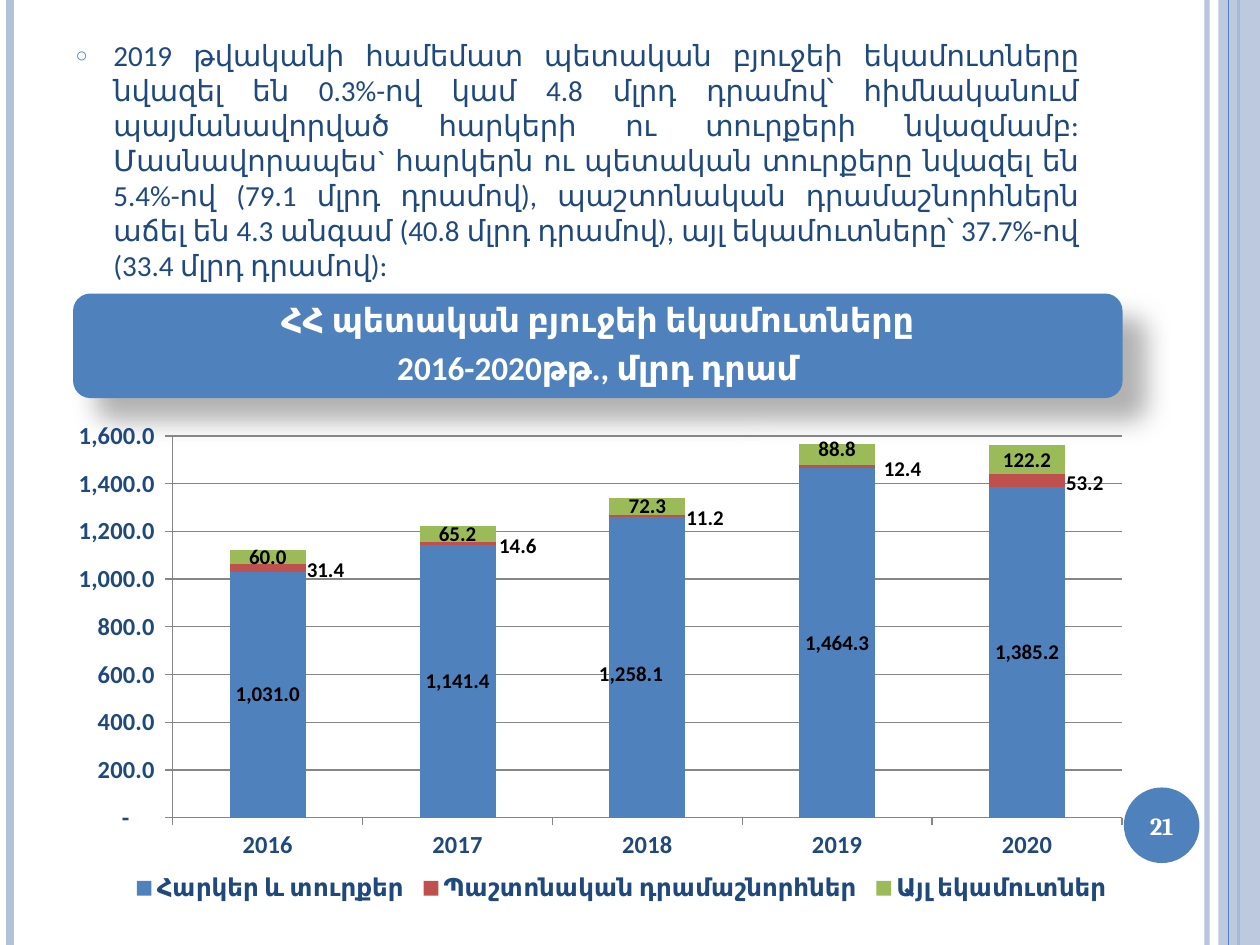
from lxml.etree import SubElement
from pptx import Presentation
from pptx.chart.data import CategoryChartData
from pptx.dml.color import RGBColor
from pptx.enum.chart import XL_CHART_TYPE as ChartType, XL_LEGEND_POSITION as LegendPosition
from pptx.enum.shapes import MSO_CONNECTOR as Connector, MSO_SHAPE as Shape
from pptx.enum.text import MSO_ANCHOR as Anchor, MSO_AUTO_SIZE as AutoSize, PP_ALIGN as Align
from pptx.oxml import parse_xml
from pptx.oxml.ns import nsdecls, qn
from pptx.util import Inches, Pt

COLORS = {"blue": "4F81BD", "red": "C0504D", "green": "9BBB59", "navy": "1F497D",
          "pale": "B3C1DB", "grid": "868686", "white": "FFFFFF", "black": "000000"}
NUMBER_FORMAT = '_(* #,##0.0_);_(* \\(#,##0.0\\);_(* "-"??_);_(@_)'
YEARS = ["2016", "2017", "2018", "2019", "2020"]
REVENUES = [
    ("Հարկեր և տուրքեր", "blue", [1031, 1141.4, 1258.1, 1464.3, 1385.2],
     {2: (-0.13, 0.05)}),
    ("Պաշտոնական դրամաշնորհներ", "red", [31.4, 14.6, 11.2, 12.4, 53.2],
     {0: (0.46, 0.02), 1: (0.48, 0.02), 2: (0.46, 0.02), 3: (0.52, 0.02), 4: (0.46, 0.02)}),
    ("Այլ եկամուտներ", "green", [60, 65.2, 72.3, 88.8, 122.2],
     {3: (0, -0.04)}),
]
SUMMARY = (
    "2019 թվականի համեմատ պետական բյուջեի եկամուտները նվազել են 0.3%-ով կամ 4.8 մլրդ "
    "դրամով՝ հիմնականում պայմանավորված հարկերի ու տուրքերի նվազմամբ: Մասնավորապես` "
    "հարկերն ու պետական տուրքերը նվազել են 5.4%-ով (79.1 մլրդ դրամով), պաշտոնական "
    "դրամաշնորհներն աճել են 4.3 անգամ (40.8 մլրդ դրամով), այլ եկամուտները՝ 37.7%-ով "
    "(33.4 մլրդ դրամով):")


def rgb(name):
    """Return the named colour."""
    return RGBColor.from_string(COLORS[name])


def style_font(font, size, color, bold=True, face="Calibri"):
    """Apply face, size, colour and weight to a font."""
    font.name, font.size, font.bold = face, Pt(size), bold
    font.color.rgb = rgb(color)


def set_alpha(shape, percent):
    """Make the shape's first solid colour partly transparent."""
    color = next(shape._element.spPr.iter(qn("a:srgbClr")))
    SubElement(color, qn("a:alpha"), val=str(percent * 1000))


def add_plain_shape(slide, kind, box, color):
    """Add a filled preset shape with no line or shadow."""
    shape = slide.shapes.add_shape(kind, *map(Inches, box))
    shape.shadow.inherit = False
    shape.fill.solid()
    shape.fill.fore_color.rgb = rgb(color)
    shape.line.fill.background()
    return shape


def add_rule(slide, x, height, color, width):
    """Add a full-height vertical rule."""
    rule = slide.shapes.add_connector(
        Connector.STRAIGHT, Inches(x), 0, Inches(x), Inches(height))
    rule.line.color.rgb = rgb(color)
    rule.line.width = Pt(width)
    SubElement(rule._element.spPr, qn("a:effectLst"))
    return rule


def add_frame(slide, width, height):
    """Draw the rules and the band along the slide's sides."""
    set_alpha(add_rule(slide, width - 0.42, height, "pale", 3), 93)
    add_rule(slide, 0.08, height, "pale", 4.5)
    add_rule(slide, width - 0.17, height, "blue", 1.5)
    band = add_plain_shape(slide, Shape.RECTANGLE, (width - 0.33, 0, 0.33, height), "pale")
    set_alpha(band, 87)
    add_rule(slide, width - 0.25, height, "blue", 0.75)


def add_summary(slide, box):
    """Place the bulleted summary in the body placeholder."""
    summary = slide.placeholders[1]
    summary.left, summary.top, summary.width, summary.height = map(Inches, box)
    frame = summary.text_frame
    frame.text = SUMMARY
    frame.auto_size = AutoSize.NONE
    paragraph = frame.paragraphs[0]
    paragraph.alignment = Align.JUSTIFY
    paragraph.space_before = Pt(0)
    properties = paragraph._p.get_or_add_pPr()
    properties.set("marL", str(Inches(0.3)))
    properties.set("indent", str(-Inches(0.3)))
    bullet_color = SubElement(properties, qn("a:buClr"))
    SubElement(bullet_color, qn("a:srgbClr"), val=COLORS["blue"])
    SubElement(properties, qn("a:buSzPct"), val="70000")
    SubElement(properties, qn("a:buChar"), char="○")
    style_font(paragraph.runs[0].font, 16.6, "navy", bold=False)


def add_banner(slide, box):
    """Add the rounded chart heading with its soft shadow."""
    banner = add_plain_shape(slide, Shape.ROUNDED_RECTANGLE, box, "blue")
    effects = banner._element.spPr.find(qn("a:effectLst"))
    shadow = SubElement(effects, qn("a:outerShdw"), blurRad=str(Pt(15)), dist=str(Pt(18)),
                        dir="2700000", algn="tl", rotWithShape="0")
    shadow_color = SubElement(shadow, qn("a:srgbClr"), val=COLORS["black"])
    SubElement(shadow_color, qn("a:alpha"), val="30000")
    frame = banner.text_frame
    frame.word_wrap = True
    frame.vertical_anchor = Anchor.MIDDLE
    frame.text = "ՀՀ պետական բյուջեի եկամուտները\n2016-2020թթ., մլրդ դրամ"
    for paragraph in frame.paragraphs:
        paragraph.alignment = Align.CENTER
        paragraph.line_spacing = 0.9
        paragraph.space_after = Pt(6.65)
        style_font(paragraph.runs[0].font, 19, "white")


def add_page_number(slide, box):
    """Add the round page number."""
    badge = add_plain_shape(slide, Shape.OVAL, box, "blue")
    frame = badge.text_frame
    frame.margin_left = frame.margin_right = 0
    frame.vertical_anchor = Anchor.MIDDLE
    frame.text = "21"
    paragraph = frame.paragraphs[0]
    paragraph.alignment = Align.CENTER
    style_font(paragraph.runs[0].font, 14, "white", face="Cambria")


def manual_layout(box, chart_size, head=""):
    """Build a chart layout from inches, as shares of the chart's size."""
    shares = [length / chart_size[i % 2] for i, length in enumerate(box)]
    parts = "".join(f'<c:{key} val="{share:.4f}"/>' for key, share in zip("xywh", shares))
    return parse_xml(f'<c:layout {nsdecls("c")}><c:manualLayout>{head}{parts}'
                     '</c:manualLayout></c:layout>')


def style_labels(series, offsets, chart_size):
    """Show the values of a series and move the labels that need room."""
    labels = series.data_labels
    labels.show_value = True
    labels.number_format = NUMBER_FORMAT
    labels.number_format_is_linked = False
    style_font(labels.font, 12, "black")
    for leader_lines in series._element.iter(qn("c:showLeaderLines")):
        leader_lines.set("val", "0")
    for index in offsets:
        style_font(series.points[index].data_label.font, 12, "black")
    for label in series._element.iter(qn("c:dLbl")):
        position = label.find(qn("c:idx"))
        position.addnext(manual_layout(offsets[int(position.get("val"))], chart_size))


def place_chart_parts(chart, plot_box, legend_box, chart_size):
    """Fix the plot area and the legend inside the chart."""
    edges = '<c:xMode val="edge"/><c:yMode val="edge"/>'
    area = chart._chartSpace.chart.plotArea
    legend = chart.legend._element
    for part in (area, legend):
        for layout in part.findall(qn("c:layout")):
            part.remove(layout)
    area.insert(0, manual_layout(plot_box, chart_size, '<c:layoutTarget val="inner"/>' + edges))
    legend.find(qn("c:legendPos")).addnext(manual_layout(legend_box, chart_size, edges))


def add_revenue_chart(slide, box):
    """Add the stacked column chart of revenues by year."""
    data = CategoryChartData(number_format=NUMBER_FORMAT)
    data.categories = YEARS
    for name, _, values, _ in REVENUES:
        data.add_series(name, values)
    chart = slide.shapes.add_chart(ChartType.COLUMN_STACKED, *map(Inches, box), data).chart
    style_font(chart.font, 10, "black", bold=False, face="Cambria")
    chart.has_title = False
    chart.has_legend = True
    chart.legend.position = LegendPosition.BOTTOM
    chart.legend.include_in_layout = False
    style_font(chart.legend.font, 14, "navy")
    for axis in (chart.category_axis, chart.value_axis):
        style_font(axis.tick_labels.font, 14, "navy")
        axis.format.line.color.rgb = rgb("grid")
    scale = chart.value_axis
    scale.minimum_scale, scale.maximum_scale, scale.major_unit = 0, 1600, 200
    scale.tick_labels.number_format = NUMBER_FORMAT
    scale.tick_labels.number_format_is_linked = False
    scale.major_gridlines.format.line.color.rgb = rgb("grid")
    plot = chart.plots[0]
    plot.gap_width, plot.overlap, plot.vary_by_categories = 150, 100, False
    for series, (_, color, _, offsets) in zip(plot.series, REVENUES):
        series.format.fill.solid()
        series.format.fill.fore_color.rgb = rgb(color)
        style_labels(series, offsets, box[2:])
    place_chart_parts(chart, (0.78, 0.13, 7.55, 3.03), (0.4, 3.57, 7.9, 0.3), box[2:])


def main():
    """Build and save the slide."""
    deck = Presentation()
    deck.slide_width, deck.slide_height = Inches(10), Inches(7.5)
    slide = deck.slides.add_slide(deck.slide_layouts[1])
    heading = slide.shapes.title._element
    heading.getparent().remove(heading)
    add_frame(slide, 10, 7.5)
    add_summary(slide, (0.5, 0.25, 8.16, 1.92))
    add_banner(slide, (0.58, 2.33, 8.33, 0.83))
    add_revenue_chart(slide, (0.58, 3.33, 8.33, 3.95))
    add_page_number(slide, (8.92, 6.25, 0.6, 0.6))
    deck.save("out.pptx")


if __name__ == "__main__":
    main()
